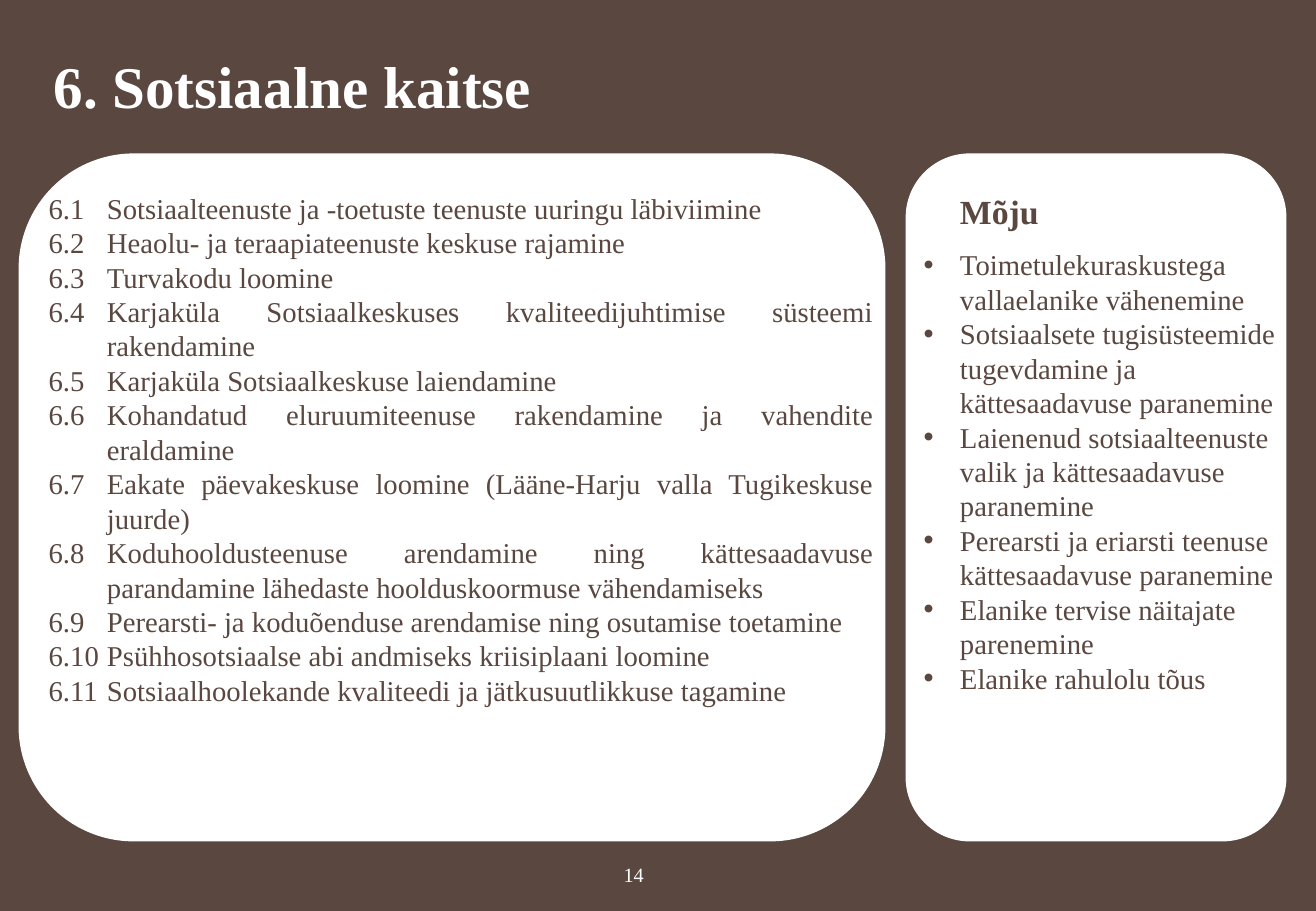
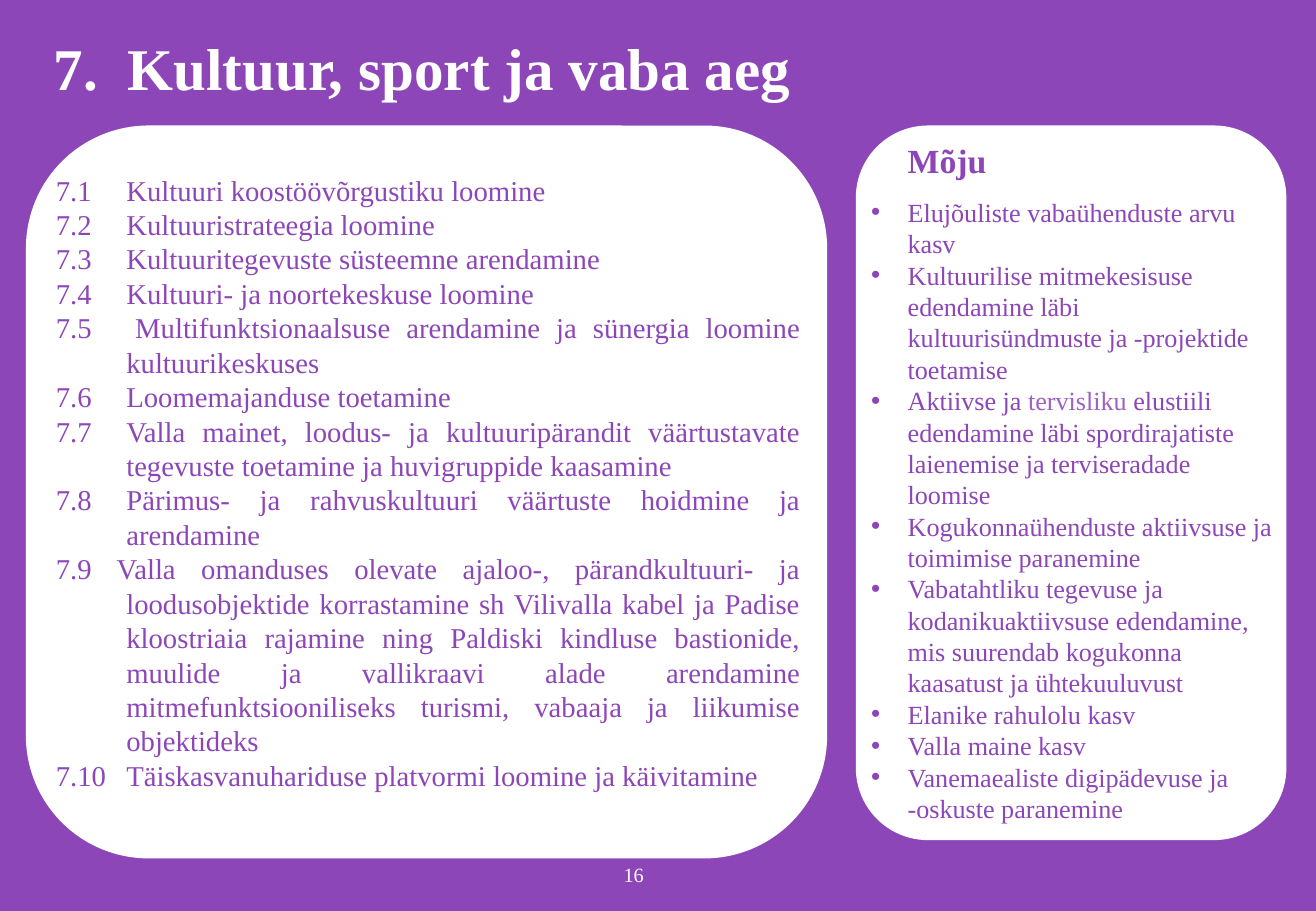
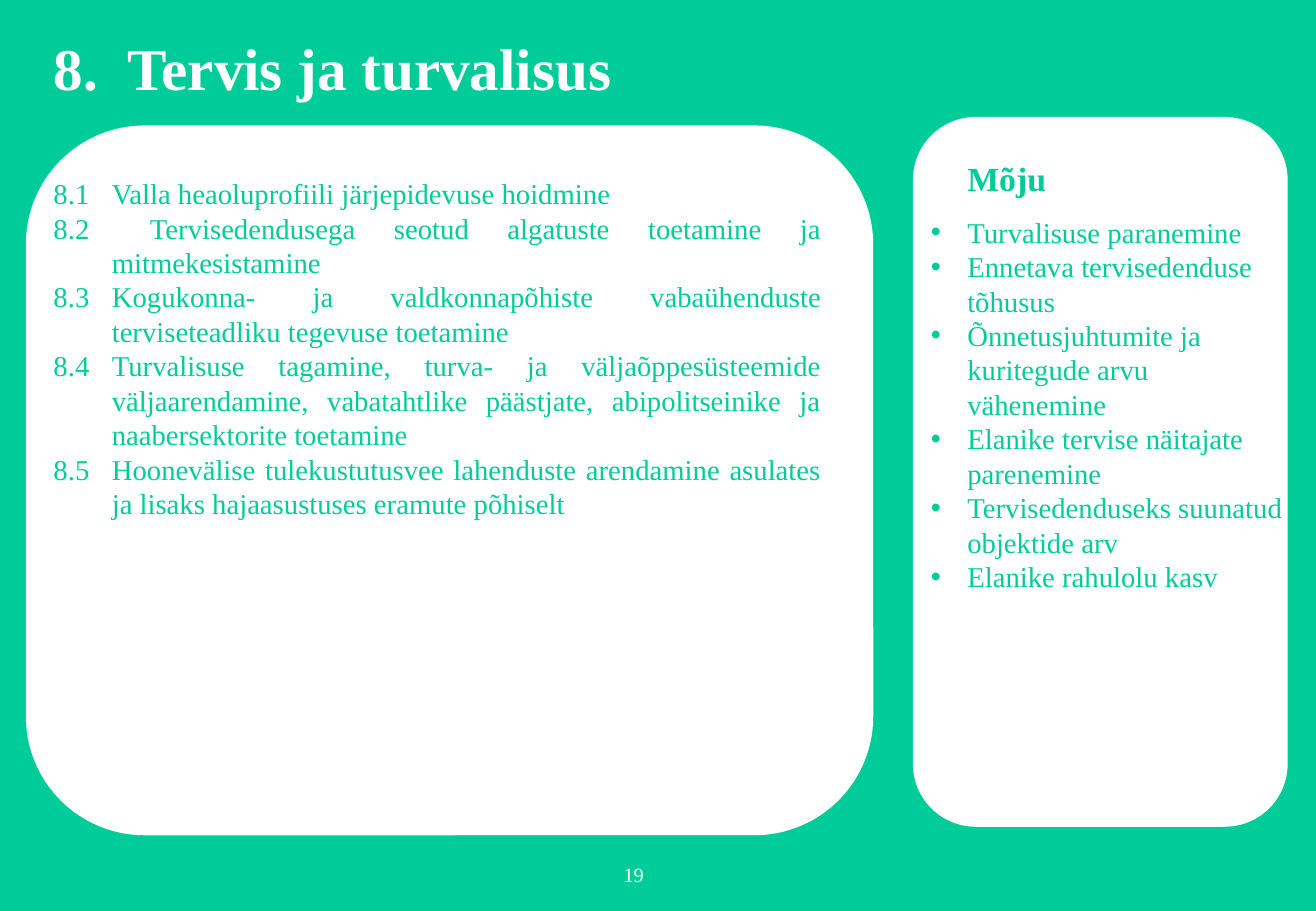
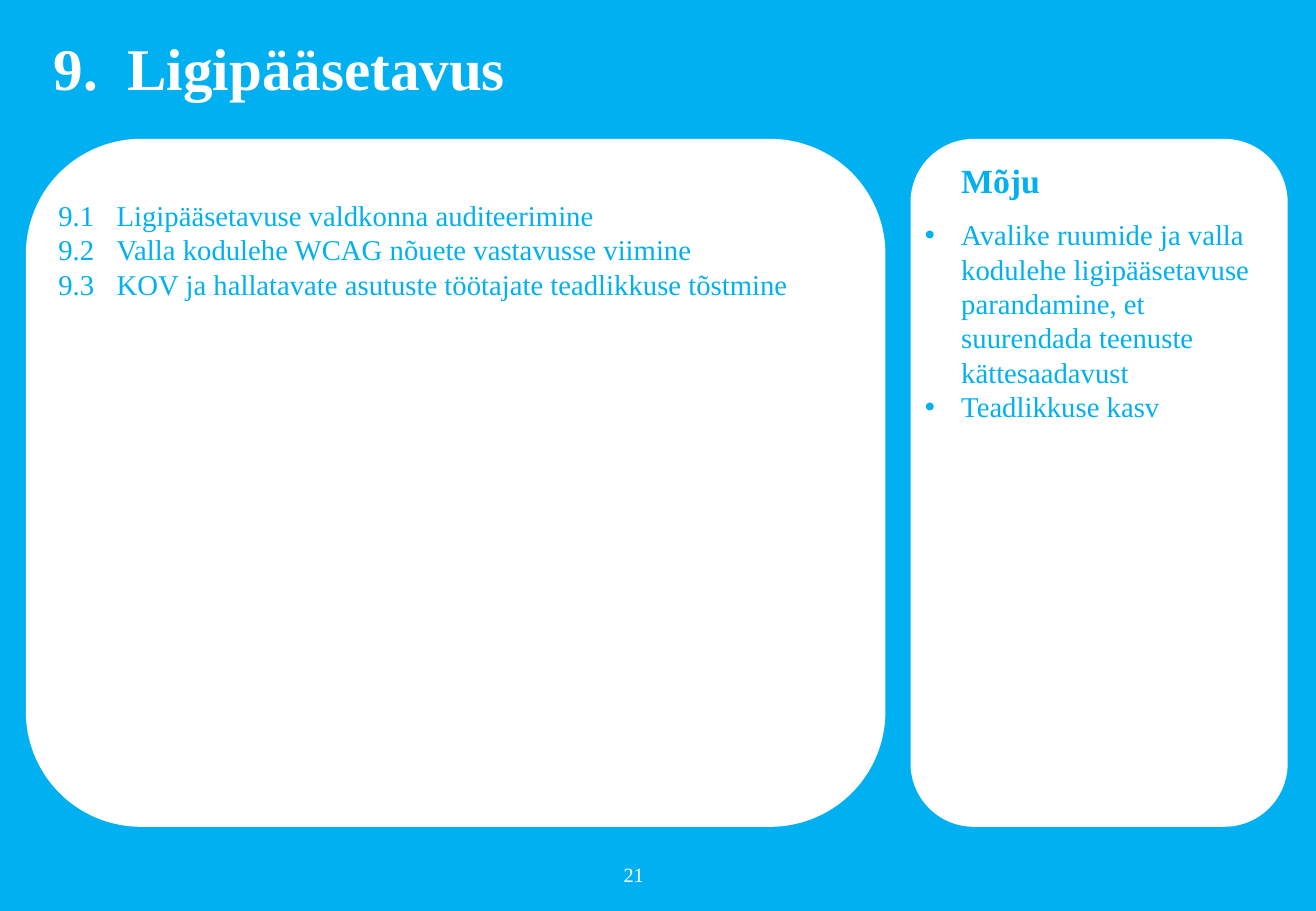
from dataclasses import dataclass

from lxml import etree
from pptx import Presentation
from pptx.dml.color import RGBColor
from pptx.enum.shapes import MSO_SHAPE
from pptx.enum.text import MSO_ANCHOR, PP_ALIGN
from pptx.oxml.ns import qn
from pptx.util import Inches, Pt

ROUNDED = MSO_SHAPE.ROUNDED_RECTANGLE
TOP, MIDDLE = MSO_ANCHOR.TOP, MSO_ANCHOR.MIDDLE
LEFT, CENTER, JUSTIFY = PP_ALIGN.LEFT, PP_ALIGN.CENTER, PP_ALIGN.JUSTIFY


@dataclass(frozen=True)
class Theme:
    font: str = "Times New Roman"
    white: str = "FFFFFF"
    brown: str = "594740"
    purple: str = "8D46B8"
    light_purple: str = "9E61C3"
    green: str = "00CC99"
    blue: str = "00B0F0"
    title_size: float = 35
    heading_size: float = 20
    body_size: float = 17
    dense_size: float = 15.5
    page_size: float = 12
    inset: float = 0.05
    title_indent: float = 0.61
    bullet_margin: float = 0.39
    bullet_hang: float = 0.3
    heading_gap: float = 9.6


THEME = Theme()
SLIDE_WIDTH, SLIDE_HEIGHT = 10.83, 7.5
TITLE_LEFT, TITLE_WIDTH, TITLE_HEIGHT = 0.39, 9.85, 0.6
PAGE_BOX = (5.08, 7.05, 0.27, 0.3)
EFFECTS_HEADING = "Mõju"

# Boxes are left, top, width, height in inches.
SECTIONS = [
    {
        "title": "6. Sotsiaalne kaitse",
        "title_top": 0.44,
        "page": "14",
        "color": THEME.brown,
        "panels": [(0.16, 1.27, 7.12, 5.65), (7.46, 1.27, 3.12, 5.65)],
        "actions_box": (0.35, 1.52, 6.89, 4.35),
        "effects_box": (7.46, 1.52, 3.12, 4.25),
        "actions": [
            "6.1\tSotsiaalteenuste ja -toetuste teenuste uuringu läbiviimine",
            "6.2\tHeaolu- ja teraapiateenuste keskuse rajamine",
            "6.3\tTurvakodu loomine",
            "6.4\tKarjaküla Sotsiaalkeskuses kvaliteedijuhtimise süsteemi rakendamine",
            "6.5\tKarjaküla Sotsiaalkeskuse laiendamine",
            "6.6\tKohandatud eluruumiteenuse rakendamine ja vahendite eraldamine",
            "6.7\tEakate päevakeskuse loomine (Lääne-Harju valla Tugikeskuse juurde)",
            "6.8\tKoduhooldusteenuse arendamine ning kättesaadavuse parandamine "
            "lähedaste hoolduskoormuse vähendamiseks",
            "6.9\tPerearsti- ja koduõenduse arendamise ning osutamise toetamine",
            "6.10\tPsühhosotsiaalse abi andmiseks kriisiplaani loomine",
            "6.11\tSotsiaalhoolekande kvaliteedi ja jätkusuutlikkuse tagamine",
        ],
        "effects": [
            "Toimetulekuraskustega vallaelanike vähenemine",
            "Sotsiaalsete tugisüsteemide tugevdamine ja kättesaadavuse paranemine",
            "Laienenud sotsiaalteenuste valik ja kättesaadavuse paranemine",
            "Perearsti ja eriarsti teenuse kättesaadavuse paranemine",
            "Elanike tervise näitajate parenemine",
            "Elanike rahulolu tõus",
        ],
    },
    {
        "title": "7.\tKultuur, sport ja vaba aeg",
        "page": "16",
        "color": THEME.purple,
        "panels": [(0.22, 1.04, 6.58, 6.02), (7.05, 1.04, 3.53, 5.87)],
        "actions_box": (0.41, 1.37, 6.23, 5.25),
        "effects_box": (7.03, 1.1, 3.53, 5.73),
        "number_width": 0.58,
        "effects_size": THEME.dense_size,
        "actions": [
            "7.1\tKultuuri koostöövõrgustiku loomine",
            "7.2\tKultuuristrateegia loomine",
            "7.3\tKultuuritegevuste süsteemne arendamine",
            "7.4\tKultuuri- ja noortekeskuse loomine",
            "7.5 \tMultifunktsionaalsuse arendamine ja sünergia loomine kultuurikeskuses",
            "7.6\tLoomemajanduse toetamine",
            "7.7\tValla mainet, loodus- ja kultuuripärandit väärtustavate tegevuste "
            "toetamine ja huvigruppide kaasamine",
            "7.8\tPärimus- ja rahvuskultuuri väärtuste hoidmine ja arendamine",
            "7.9 Valla omanduses olevate ajaloo-, pärandkultuuri- ja loodusobjektide "
            "korrastamine sh Vilivalla kabel ja Padise kloostriaia rajamine ning "
            "Paldiski kindluse bastionide, muulide ja vallikraavi alade arendamine "
            "mitmefunktsiooniliseks turismi, vabaaja ja liikumise objektideks",
            "7.10\tTäiskasvanuhariduse platvormi loomine ja käivitamine",
        ],
        "effects": [
            "Elujõuliste vabaühenduste arvu kasv",
            "Kultuurilise mitmekesisuse edendamine läbi kultuurisündmuste ja "
            "-projektide toetamise",
            [
                ("Aktiivse ja ", THEME.purple),
                ("tervisliku", THEME.light_purple),
                (" elustiili edendamine läbi spordirajatiste laienemise ja "
                 "terviseradade loomise", THEME.purple),
            ],
            "Kogukonnaühenduste aktiivsuse ja toimimise paranemine",
            "Vabatahtliku tegevuse ja kodanikuaktiivsuse edendamine, mis suurendab "
            "kogukonna kaasatust ja ühtekuuluvust",
            "Elanike rahulolu kasv",
            "Valla maine kasv",
            "Vanemaealiste digipädevuse ja -oskuste paranemine",
        ],
    },
    {
        "title": "8.\tTervis ja turvalisus",
        "page": "19",
        "color": THEME.green,
        "panels": [(0.22, 1.04, 6.96, 5.83), (7.52, 0.97, 3.07, 5.83)],
        "actions_box": (0.39, 1.4, 6.42, 2.96),
        "effects_box": (7.52, 1.25, 3.09, 3.7),
        "actions": [
            "8.1\tValla heaoluprofiili järjepidevuse hoidmine",
            "8.2\t Tervisedendusega seotud algatuste toetamine ja mitmekesistamine",
            "8.3\tKogukonna- ja valdkonnapõhiste vabaühenduste terviseteadliku "
            "tegevuse toetamine",
            "8.4\tTurvalisuse tagamine, turva- ja väljaõppesüsteemide väljaarendamine, "
            "vabatahtlike päästjate, abipolitseinike ja naabersektorite toetamine",
            "8.5\tHoonevälise tulekustutusvee lahenduste arendamine asulates ja lisaks "
            "hajaasustuses eramute põhiselt",
        ],
        "effects": [
            "Turvalisuse paranemine",
            "Ennetava tervisedenduse tõhusus",
            "Õnnetusjuhtumite ja kuritegude arvu vähenemine",
            "Elanike tervise näitajate parenemine",
            "Tervisedenduseks suunatud objektide arv",
            "Elanike rahulolu kasv",
        ],
    },
    {
        "title": "9.\tLigipääsetavus",
        "page": "21",
        "color": THEME.blue,
        "panels": [(0.22, 1.15, 7.06, 5.65), (7.5, 1.15, 3.09, 5.65)],
        "actions_box": (0.43, 1.58, 6.32, 0.96),
        "effects_box": (7.47, 1.27, 3.11, 2.27),
        "actions": [
            "9.1\tLigipääsetavuse valdkonna auditeerimine",
            "9.2\tValla kodulehe WCAG nõuete vastavusse viimine",
            "9.3\tKOV ja hallatavate asutuste töötajate teadlikkuse tõstmine",
        ],
        "effects": [
            "Avalike ruumide ja valla kodulehe ligipääsetavuse parandamine, et "
            "suurendada teenuste kättesaadavust",
            "Teadlikkuse kasv",
        ],
    },
]


def add_frame(slide, box, anchor=TOP, wrap=True):
    frame = slide.shapes.add_textbox(*map(Inches, box)).text_frame
    frame.word_wrap = wrap
    frame.vertical_anchor = anchor
    frame.margin_left = frame.margin_right = Inches(THEME.inset)
    frame.margin_top = frame.margin_bottom = Inches(THEME.inset)
    return frame


def write(frame, text, *, size, color, bold=False, align=LEFT, margin=0, hang=0,
          bullet=None, space_after=0, line_spacing=None):
    """Add one paragraph; text is a string or a list of (text, color) pieces."""
    first = frame.paragraphs[0]
    paragraph = frame.add_paragraph() if first.runs else first
    paragraph.alignment = align
    paragraph.space_after = Pt(space_after)
    if line_spacing:
        paragraph.line_spacing = line_spacing
    properties = paragraph._p.get_or_add_pPr()
    properties.set("marL", str(Inches(margin)))
    properties.set("indent", str(-Inches(hang)))
    if bullet:
        etree.SubElement(properties, qn("a:buFont")).set("typeface", "Arial")
        etree.SubElement(properties, qn("a:buChar")).set("char", bullet)
    pieces = [(text, color)] if isinstance(text, str) else text
    for piece, piece_color in pieces:
        run = paragraph.add_run()
        run.text = piece
        run.font.name = THEME.font
        run.font.size = Pt(size)
        run.font.bold = bold
        run.font.color.rgb = RGBColor.from_string(piece_color)


def add_panel(slide, box):
    panel = slide.shapes.add_shape(ROUNDED, *map(Inches, box))
    panel.shadow.inherit = False
    white = RGBColor.from_string(THEME.white)
    panel.fill.solid()
    panel.fill.fore_color.rgb = white
    panel.line.color.rgb = white
    panel.line.width = Pt(1)


def add_actions(slide, section):
    frame = add_frame(slide, section["actions_box"])
    number_width = section.get("number_width", 0.48)
    for action in section["actions"]:
        write(frame, action, size=THEME.body_size, color=section["color"],
              align=JUSTIFY, margin=number_width, hang=number_width)


def add_effects(slide, section):
    frame = add_frame(slide, section["effects_box"])
    color = section["color"]
    write(frame, EFFECTS_HEADING, size=THEME.heading_size, color=color, bold=True,
          margin=THEME.bullet_margin, space_after=THEME.heading_gap)
    for effect in section["effects"]:
        write(frame, effect, size=section.get("effects_size", THEME.body_size),
              color=color, margin=THEME.bullet_margin, hang=THEME.bullet_hang,
              bullet="•")


def add_section(deck, section):
    slide = deck.slides.add_slide(deck.slide_layouts[6])
    background = slide.background.fill
    background.solid()
    background.fore_color.rgb = RGBColor.from_string(section["color"])
    for box in section["panels"]:
        add_panel(slide, box)
    add_actions(slide, section)
    add_effects(slide, section)
    title_box = (TITLE_LEFT, section.get("title_top", 0.29), TITLE_WIDTH, TITLE_HEIGHT)
    write(add_frame(slide, title_box, MIDDLE), section["title"],
          size=THEME.title_size, color=THEME.white, bold=True, line_spacing=0.9,
          margin=THEME.title_indent, hang=THEME.title_indent)
    write(add_frame(slide, PAGE_BOX, MIDDLE, wrap=False), section["page"],
          size=THEME.page_size, color=THEME.white, align=CENTER)


def main():
    deck = Presentation()
    deck.slide_width, deck.slide_height = Inches(SLIDE_WIDTH), Inches(SLIDE_HEIGHT)
    for section in SECTIONS:
        add_section(deck, section)
    deck.save("out.pptx")


if __name__ == "__main__":
    main()
